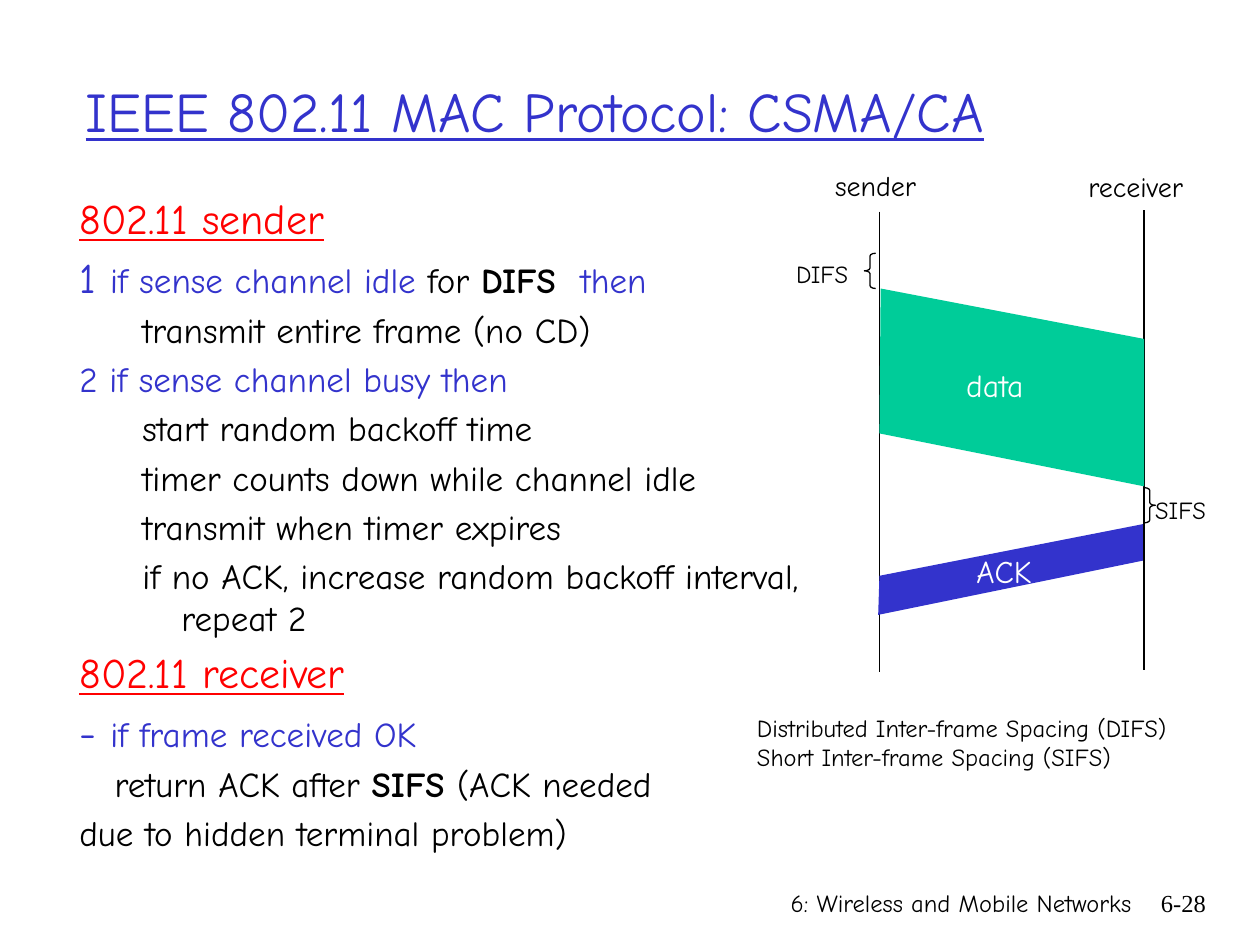
from lxml.etree import SubElement
from pptx import Presentation
from pptx.dml.color import RGBColor
from pptx.enum.shapes import MSO_CONNECTOR, MSO_SHAPE
from pptx.enum.text import MSO_ANCHOR, MSO_AUTO_SIZE, PP_ALIGN
from pptx.oxml.ns import qn
from pptx.util import Inches, Pt

COLORS = {
    "black": "000000",
    "white": "FFFFFF",
    "blue": "3333CC",
    "red": "FF0000",
    "green": "00CC99",
}
FONT = "Comic Neue"


def format_run(run, size, color, bold=False, underline=False, font=FONT):
    run.font.name = font
    run.font.size = Pt(size)
    run.font.bold = bold
    run.font.underline = underline
    run.font.color.rgb = RGBColor.from_string(COLORS[color])


def add_label(lines, left, top, width, height, size, color="black",
              align=PP_ALIGN.LEFT, wrap=False, font=FONT):
    label = slide.shapes.add_textbox(
        Inches(left), Inches(top), Inches(width), Inches(height))
    label.text_frame.text = "\n".join(lines)
    label.text_frame.word_wrap = wrap
    for paragraph in label.text_frame.paragraphs:
        paragraph.alignment = align
        format_run(paragraph.runs[0], size, color, font=font)


presentation = Presentation()
presentation.slide_width = Inches(10)
presentation.slide_height = Inches(7.5)
slide = presentation.slides.add_slide(presentation.slide_layouts[1])

# Footer and slide number
add_label(["6: Wireless and Mobile Networks"], 4.86, 7, 4.22, 0.5, 14,
          align=PP_ALIGN.RIGHT, wrap=True)
add_label(["6-28"], 8.93, 7, 0.74, 0.5, 14,
          align=PP_ALIGN.RIGHT, wrap=True, font="Times New Roman")

# Title
title = slide.shapes.title
title.left, title.top = Inches(0.58), Inches(0.25)
title.width, title.height = Inches(8.5), Inches(1.25)
title.text_frame.text = "IEEE 802.11 MAC Protocol: CSMA/CA"
title.text_frame.auto_size = MSO_AUTO_SIZE.NONE
title.text_frame.vertical_anchor = MSO_ANCHOR.MIDDLE
title.text_frame.paragraphs[0].alignment = PP_ALIGN.LEFT
format_run(title.text_frame.paragraphs[0].runs[0], 32, "blue", underline=True)

# Protocol steps: (kind, [(text, size, color, bold)])
INDENTS = {  # kind: (level, left margin, first line indent)
    "heading": (0, 0.38, -0.38),
    "step": (0, 0.38, -0.38),
    "action": (1, 0.81, -0.31),
    "reply": (0, 0.28, 0),
}
steps = [
    ("heading", [("802.11 sender", 24, "red", False)]),
    ("step", [("1 ", 24, "blue", False),
              ("if sense channel idle", 20, "blue", False),
              (" for ", 20, "black", False),
              ("DIFS  ", 20, "black", True),
              ("then", 20, "blue", False)]),
    ("action", [("transmit entire frame (no CD)", 20, "black", False)]),
    ("step", [("2 if sense channel busy then", 20, "blue", False)]),
    ("action", [("start random backoff time", 20, "black", False)]),
    ("action", [("timer counts down while channel idle", 20, "black", False)]),
    ("action", [("transmit when timer expires", 20, "black", False)]),
    ("action", [("if no ACK, increase random backoff interval, repeat 2",
                 20, "black", False)]),
    ("heading", [("802.11 receiver", 24, "red", False)]),
    ("step", [("- ", 24, "blue", False),
              ("if frame received OK", 20, "blue", False)]),
    ("reply", [("return ACK after ", 20, "black", False),
               ("SIFS ", 20, "black", True),
               ("(ACK needed", 20, "black", False)]),
    ("step", [("due to hidden terminal problem)", 20, "black", False)]),
]
body = slide.placeholders[1]
body.left, body.top = Inches(0.53), Inches(1.48)
body.width, body.height = Inches(6.16), Inches(5.42)
body.text_frame.text = "\n".join(
    "".join(part[0] for part in parts) for _, parts in steps)
body.text_frame.auto_size = MSO_AUTO_SIZE.NONE
for paragraph, (kind, parts) in zip(body.text_frame.paragraphs, steps):
    level, margin, indent = INDENTS[kind]
    paragraph.level = level
    paragraph.space_before = Pt(0.2 * parts[0][1])
    properties = paragraph._p.get_or_add_pPr()
    properties.set("marL", str(Inches(margin)))
    properties.set("indent", str(Inches(indent)))
    SubElement(properties, qn("a:buNone"))
    paragraph.clear()
    for text, size, color, bold in parts:
        run = paragraph.add_run()
        run.text = text
        format_run(run, size, color, bold, underline=kind == "heading")

# Sender and receiver time lines
for x, top in ((6.98, 1.68), (9.08, 1.67)):
    time_line = slide.shapes.add_connector(
        MSO_CONNECTOR.STRAIGHT, Inches(x), Inches(top), Inches(x), Inches(top + 3.65))
    time_line.line.color.rgb = RGBColor.from_string(COLORS["black"])
    time_line.line.width = Pt(0.75)
    SubElement(time_line._element.spPr, qn("a:effectLst"))

# Data and ACK frames in transit
frames = [
    ("green", [(6.99, 2.29), (9.08, 2.69), (9.08, 3.86), (6.98, 3.44)]),
    ("blue", [(6.97, 4.88), (9.07, 4.45), (9.07, 4.16), (6.98, 4.57)]),
]
for color, corners in frames:
    points = [(Inches(x), Inches(y)) for x, y in corners]
    builder = slide.shapes.build_freeform(*points[0], scale=1.0)
    builder.add_line_segments(points[1:], close=True)
    frame = builder.convert_to_shape()
    frame.shadow.inherit = False
    frame.fill.solid()
    frame.fill.fore_color.rgb = RGBColor.from_string(COLORS[color])
    frame.line.fill.background()

# Braces over the waiting times
for kind, left, top in ((MSO_SHAPE.LEFT_BRACE, 6.86, 2.01),
                        (MSO_SHAPE.RIGHT_BRACE, 9.08, 3.87)):
    brace = slide.shapes.add_shape(
        kind, Inches(left), Inches(top), Inches(0.09), Inches(0.28))
    brace.adjustments[0] = 0.25
    brace.shadow.inherit = False
    brace.fill.background()
    brace.line.color.rgb = RGBColor.from_string(COLORS["black"])
    brace.line.width = Pt(0.75)

# Diagram labels and legend
add_label(["sender"], 6.53, 1.29, 0.91, 0.37, 16)
add_label(["receiver"], 8.54, 1.3, 1.07, 0.37, 16)
add_label(["DIFS"], 6.22, 2.01, 0.7, 0.33, 14)
add_label(["SIFS"], 9.07, 3.88, 0.7, 0.33, 14)
add_label(["data"], 7.57, 2.86, 0.72, 0.4, 18, "white")
add_label(["ACK"], 7.65, 4.33, 0.69, 0.4, 18, "white")
add_label(["Distributed Inter-frame Spacing (DIFS)",
           "Short Inter-frame Spacing (SIFS)"], 5.91, 5.61, 3.96, 0.57, 14, wrap=True)

presentation.save("out.pptx")
